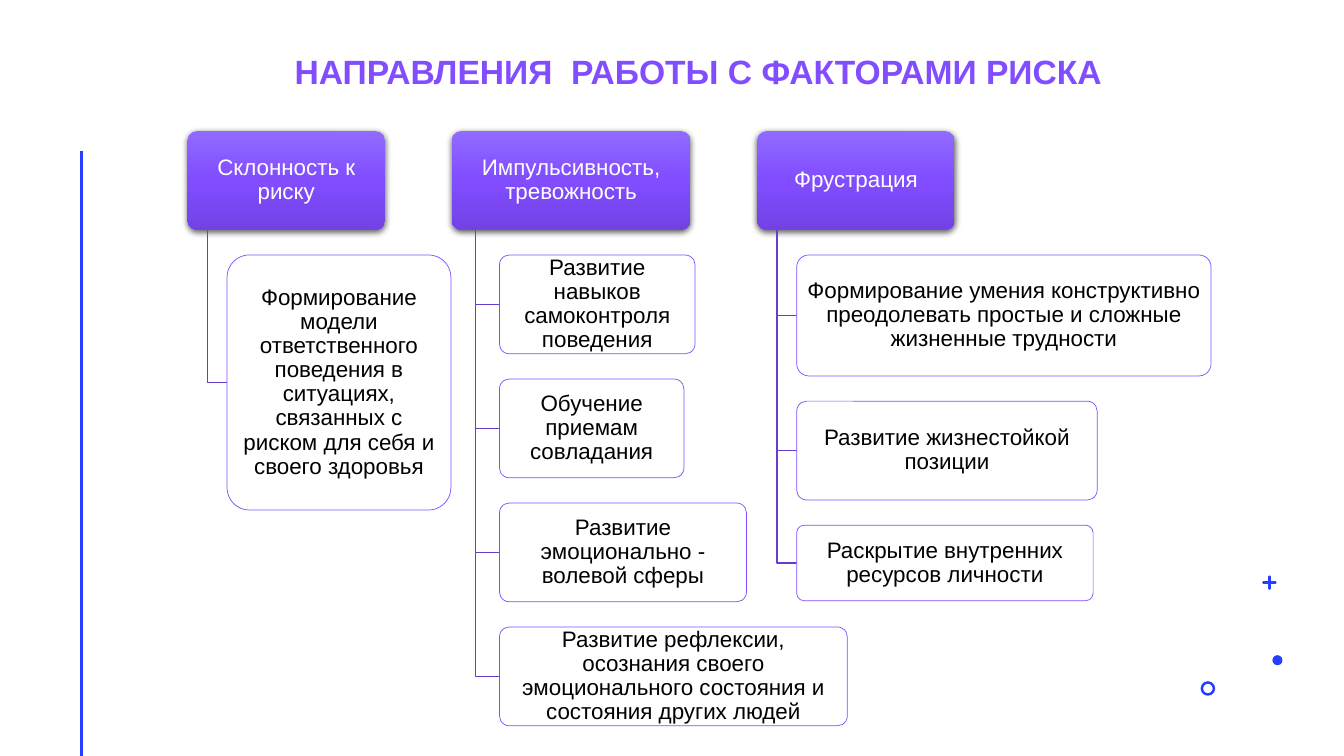
from copy import deepcopy
from dataclasses import dataclass

from lxml.etree import SubElement
from pptx import Presentation
from pptx.dml.color import RGBColor
from pptx.enum.shapes import MSO_CONNECTOR, MSO_SHAPE
from pptx.enum.text import MSO_ANCHOR, PP_ALIGN
from pptx.oxml.ns import qn
from pptx.util import Inches, Pt


@dataclass(frozen=True)
class Theme:
    font: str = "Arial"
    title_size: int = 24
    body_size: int = 16
    violet: str = "814DFF"
    gradient: tuple = ("916AFF", "814DFF", "7242E5")
    branch: str = "673ECC"
    accent: str = "243FFF"
    white: str = "FFFFFF"
    black: str = "000000"


T = Theme()
TOP, HEAD_H, GAP = 1.3, 0.98, 0.25

# Each factor: left, header width, header text, children (width, height, text)
FACTORS = [
    (1.86, 1.96, "Склонность к риску", [
        (2.22, 2.53, "Формирование модели ответственного поведения в ситуациях, "
                     "связанных с риском для себя и своего здоровья"),
    ]),
    (4.48, 2.37, "Импульсивность, тревожность", [
        (1.94, 0.98, "Развитие навыков самоконтроля поведения"),
        (1.83, 0.98, "Обучение приемам совладания"),
        (2.45, 0.98, "Развитие эмоционально - волевой сферы"),
        (3.45, 0.98, "Развитие рефлексии, осознания своего эмоционального "
                     "состояния и состояния других людей"),
    ]),
    (7.51, 1.96, "Фрустрация", [
        (4.11, 1.2, "Формирование умения конструктивно преодолевать простые "
                    "и сложные жизненные трудности"),
        (2.98, 0.98, "Развитие жизнестойкой позиции"),
        (2.94, 0.75, "Раскрытие внутренних ресурсов личности"),
    ]),
]


def rgb(value):
    return RGBColor.from_string(value)


def write(s, text, size=T.body_size, color=T.black, bold=False,
          spacing=0.9, anchor=MSO_ANCHOR.MIDDLE, inset=(0.03, 0.02)):
    tf = s.text_frame
    tf.word_wrap = True
    tf.vertical_anchor = anchor
    tf.margin_left = tf.margin_right = Inches(inset[0])
    tf.margin_top = tf.margin_bottom = Inches(inset[1])
    p = tf.paragraphs[0]
    p.alignment = PP_ALIGN.CENTER
    p.line_spacing = spacing
    r = p.add_run()
    r.text = text
    r.font.name, r.font.size, r.font.bold = T.font, Pt(size), bold
    r.font.color.rgb = rgb(color)


def add_preset(slide, kind, x, y, w, h):
    s = slide.shapes.add_shape(kind, Inches(x), Inches(y), Inches(w), Inches(h))
    s.shadow.inherit = False
    return s


def add_line(slide, x1, y1, x2, y2, width, cap="flat"):
    s = slide.shapes.add_connector(
        MSO_CONNECTOR.STRAIGHT, Inches(x1), Inches(y1), Inches(x2), Inches(y2))
    s.line.color.rgb = rgb(T.accent)
    s.line.width = Pt(width)
    s.line._ln.set("cap", cap)
    SubElement(s._element.spPr, qn("a:effectLst"))


def add_title(slide, x, y, w, h):
    s = slide.shapes.add_textbox(Inches(x), Inches(y), Inches(w), Inches(h))
    write(s, "НАПРАВЛЕНИЯ  РАБОТЫ С ФАКТОРАМИ РИСКА", size=T.title_size,
          color=T.violet, bold=True, spacing=Pt(40),
          anchor=MSO_ANCHOR.BOTTOM, inset=(0, 0))


def add_header(slide, x, y, w, h, text):
    s = add_preset(slide, MSO_SHAPE.ROUNDED_RECTANGLE, x, y, w, h)
    s.adjustments[0] = 0.1
    s.line.fill.background()
    # Three-stop gradient, light at the top
    s.fill.gradient()
    s.fill.gradient_angle = 270
    stops = s._element.spPr.find(qn("a:gradFill")).find(qn("a:gsLst"))
    stops.insert(1, deepcopy(stops[0]))
    for i, (stop, color) in enumerate(zip(s.fill.gradient_stops, T.gradient)):
        stop.position = i / 2
        stop.color.rgb = rgb(color)
    # Soft shadow below
    effects = s._element.spPr.find(qn("a:effectLst"))
    shadow = SubElement(effects, qn("a:outerShdw"), blurRad=str(Pt(4.5)),
                        dist=str(Pt(1.5)), dir="5400000", rotWithShape="0")
    color = SubElement(shadow, qn("a:srgbClr"), val=T.black)
    SubElement(color, qn("a:alpha"), val="63000")
    write(s, text, color=T.white)


def add_branch(slide, x, y, end_x, end_y):
    fb = slide.shapes.build_freeform(Inches(x), Inches(y))
    fb.add_line_segments([(Inches(x), Inches(end_y)),
                          (Inches(end_x), Inches(end_y))], close=False)
    s = fb.convert_to_shape()
    s.shadow.inherit = False
    s.fill.background()
    s.line.color.rgb = rgb(T.branch)
    s.line.width = Pt(1)


def add_child(slide, x, y, w, h, text):
    s = add_preset(slide, MSO_SHAPE.ROUNDED_RECTANGLE, x, y, w, h)
    s.adjustments[0] = 0.1
    s.fill.solid()
    s.fill.fore_color.rgb = rgb(T.white)
    s.line.color.rgb = rgb(T.violet)
    s.line.width = Pt(0.5)
    write(s, text)


def add_factor(slide, x, y, w, h, header, children):
    add_header(slide, x, y, w, h, header)
    # The spine sits at 10% of the header width, the children at 20%
    spine_x, child_x = x + 0.1 * w, x + 0.2 * w
    child_y = y + h + GAP
    for child_w, child_h, text in children:
        add_branch(slide, spine_x, y + h, child_x, child_y + child_h / 2)
        add_child(slide, child_x, child_y, child_w, child_h, text)
        child_y += child_h + GAP


def add_decor(slide, x, y):
    # Plus sign
    cx, cy, arm = x + 0.68, y + 0.08, 0.06
    add_line(slide, cx - arm, cy, cx + arm, cy, 1.75, cap="rnd")
    add_line(slide, cx, cy - arm, cx, cy + arm, 1.75, cap="rnd")
    # Ring
    ring = add_preset(slide, MSO_SHAPE.OVAL, x + 0.01, y + 1.07, 0.12, 0.12)
    ring.fill.background()
    ring.line.color.rgb = rgb(T.accent)
    ring.line.width = Pt(1.75)
    # Dot
    dot = add_preset(slide, MSO_SHAPE.OVAL, x + 0.71, y + 0.8, 0.1, 0.1)
    dot.fill.solid()
    dot.fill.fore_color.rgb = rgb(T.accent)
    dot.line.fill.background()


def main():
    prs = Presentation()
    prs.slide_width, prs.slide_height = Inches(13.33), Inches(7.5)
    slide = prs.slides.add_slide(prs.slide_layouts[6])
    add_line(slide, 0.81, 1.5, 0.81, 7.5, 2)
    add_decor(slide, 11.91, 5.7)
    add_title(slide, 1.01, 0.41, 11.83, 0.49)
    for x, w, header, children in FACTORS:
        add_factor(slide, x, TOP, w, HEAD_H, header, children)
    prs.save("out.pptx")


if __name__ == "__main__":
    main()
